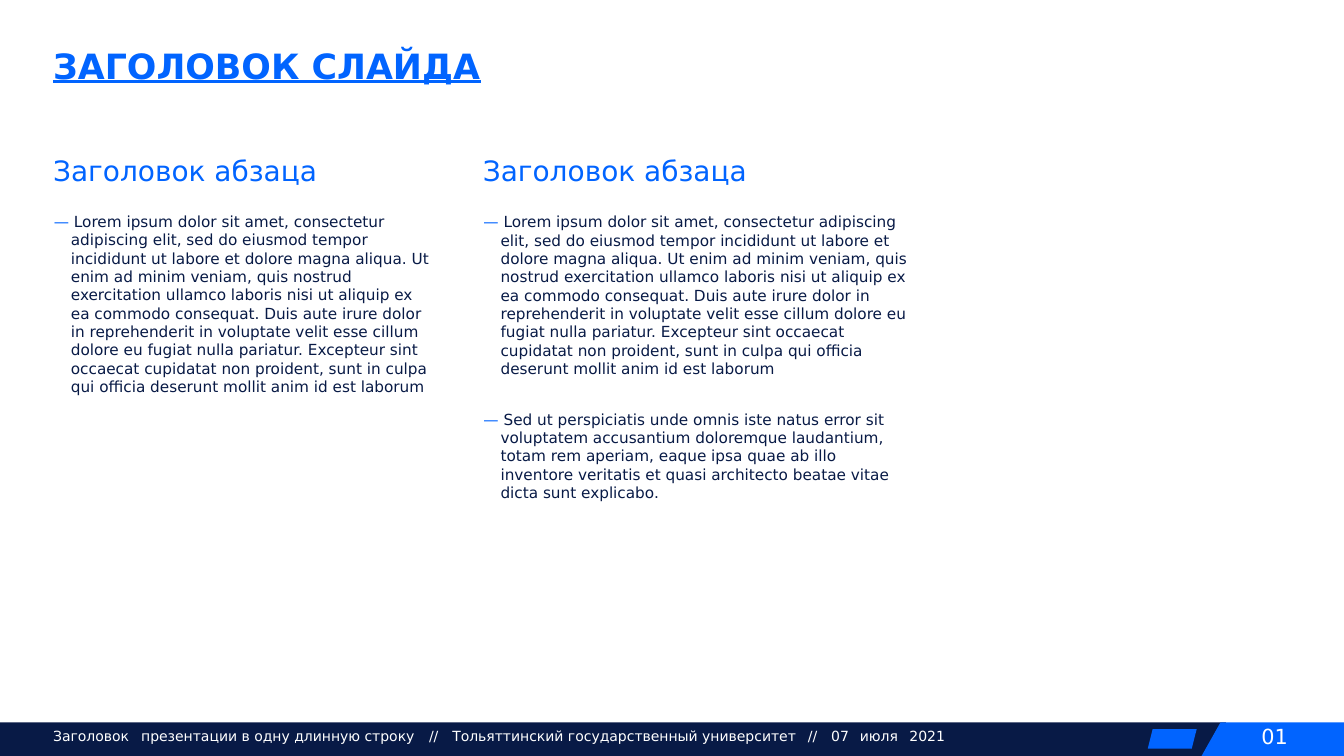
from lxml.etree import SubElement
from pptx import Presentation
from pptx.dml.color import RGBColor
from pptx.enum.shapes import MSO_SHAPE
from pptx.enum.text import MSO_AUTO_SIZE, MSO_UNDERLINE
from pptx.oxml.ns import qn
from pptx.util import Inches, Pt

WIDTH, HEIGHT = 21.99, 12.37
MARGIN, COLUMN_STEP = 0.87, 7.03
BAR_HEIGHT = 0.55
BAR_TOP = HEIGHT - BAR_HEIGHT
HEADING_ROW, SECOND_ROW = 2.51, 6.7

BLUE, NAVY, WHITE = "0164FF", "081A46", "FFFFFF"
FONT = "DejaVu Sans"

TITLE = {"size": Pt(41), "bold": True, "underline": MSO_UNDERLINE.HEAVY_LINE}
HEADING = {"size": Pt(33)}
BODY = {"size": Pt(18)}
FOOTER = {"size": Pt(16.5)}
NUMBER = {"size": Pt(24.5)}

FOOTER_TABS = [1.44, 6.15, 6.53, 12.35, 12.73, 13.2, 14.01]
FOOTER_TEXT = ("Заголовок\tпрезентации в одну длинную строку\t//"
               "\tТольяттинский государственный университет\t//\t07\tиюля\t2021")
SECTION_HEADING = "Заголовок абзаца"
LOREM = ("Lorem ipsum dolor sit amet, consectetur adipiscing elit, sed do eiusmod "
         "tempor incididunt ut labore et dolore magna aliqua. Ut enim ad minim "
         "veniam, quis nostrud exercitation ullamco laboris nisi ut aliquip ex ea "
         "commodo consequat. Duis aute irure dolor in reprehenderit in voluptate "
         "velit esse cillum dolore eu fugiat nulla pariatur. Excepteur sint occaecat "
         "cupidatat non proident, sunt in culpa qui officia deserunt mollit anim id "
         "est laborum")
PERSPICIATIS = ("Sed ut perspiciatis unde omnis iste natus error sit voluptatem "
                "accusantium doloremque laudantium, totam rem aperiam, eaque ipsa "
                "quae ab illo inventore veritatis et quasi architecto beatae vitae "
                "dicta sunt explicabo.")


def color(value):
    return RGBColor.from_string(value)


def column(index):
    return MARGIN + COLUMN_STEP * index


def paint(shape, fill):
    shape.shadow.inherit = False
    shape.fill.solid()
    shape.fill.fore_color.rgb = color(fill)
    shape.line.fill.background()


def add_block(slide, kind, left, top, width, height, fill):
    block = slide.shapes.add_shape(
        kind, Inches(left), Inches(top), Inches(width), Inches(height))
    paint(block, fill)


def add_outline(slide, points, fill):
    corners = [(Inches(x), Inches(y)) for x, y in points]
    builder = slide.shapes.build_freeform(*corners[0])
    builder.add_line_segments(corners[1:], close=True)
    paint(builder.convert_to_shape(), fill)


def add_frame(slide, left, top, width, height):
    frame = slide.shapes.add_textbox(
        Inches(left), Inches(top), Inches(width), Inches(height)).text_frame
    settings = {"word_wrap": True, "auto_size": MSO_AUTO_SIZE.SHAPE_TO_FIT_TEXT,
                "margin_left": 0, "margin_right": 0,
                "margin_top": Inches(0.01), "margin_bottom": 0}
    for name, value in settings.items():
        setattr(frame, name, value)
    return frame


def add_run(paragraph, text, text_color, style):
    run = paragraph.add_run()
    run.text = text
    for name, value in {"name": FONT, **style}.items():
        setattr(run.font, name, value)
    run.font.color.rgb = color(text_color)


def add_tabs(paragraph, positions):
    tab_list = SubElement(paragraph._p.get_or_add_pPr(), qn("a:tabLst"))
    for position in positions:
        SubElement(tab_list, qn("a:tab"), pos=str(Inches(position)), algn="l")


def add_label(slide, box, text, text_color, style, tabs=()):
    paragraph = add_frame(slide, *box).paragraphs[0]
    if tabs:
        add_tabs(paragraph, tabs)
    add_run(paragraph, text, text_color, style)


def add_dash_item(paragraph, text):
    # Hanging indent behind the dash
    properties = paragraph._p.get_or_add_pPr()
    for name, value in {"marL": 0.29, "indent": -0.28}.items():
        properties.set(name, str(Inches(value)))
    paragraph.line_spacing = 1.0
    add_run(paragraph, "— ", BLUE, BODY)
    add_run(paragraph, text, NAVY, BODY)


def add_section(slide, left, width, height, gap):
    frame = add_frame(slide, left, HEADING_ROW, width, height)
    add_run(frame.paragraphs[0], SECTION_HEADING, BLUE, HEADING)
    item = frame.add_paragraph()
    item.space_before = Pt(gap)
    add_dash_item(item, LOREM)


def add_footer(slide):
    # Dark bar and slanted corner for the page number
    add_block(slide, MSO_SHAPE.RECTANGLE, 0, BAR_TOP, 20.06, BAR_HEIGHT, NAVY)
    add_outline(slide, [(WIDTH, BAR_TOP), (19.97, BAR_TOP),
                        (19.66, HEIGHT), (WIDTH, HEIGHT)], BLUE)
    add_label(slide, (20.64, 11.84, 0.6, 0.44), "01", WHITE, NUMBER)
    add_label(slide, (MARGIN, 11.9, 15.5, 0.3), FOOTER_TEXT, WHITE, FOOTER,
              FOOTER_TABS)
    # Plain emblem
    add_block(slide, MSO_SHAPE.PARALLELOGRAM, 18.78, 11.93, 0.8, 0.32, BLUE)


def main():
    deck = Presentation()
    deck.slide_width, deck.slide_height = Inches(WIDTH), Inches(HEIGHT)
    slide = deck.slides.add_slide(deck.slide_layouts[6])

    # Title
    add_label(slide, (MARGIN, 0.73, 20.37, 0.73), "ЗАГОЛОВОК СЛАЙДА", BLUE, TITLE)

    add_footer(slide)

    # Text columns
    add_section(slide, column(0), 6.17, 4, 29)
    add_section(slide, column(1), 7.05, 3.71, 29.4)
    second_item = add_frame(slide, column(1), SECOND_ROW, 6.7, 1.54)
    add_dash_item(second_item.paragraphs[0], PERSPICIATIS)

    deck.save("out.pptx")


if __name__ == "__main__":
    main()
